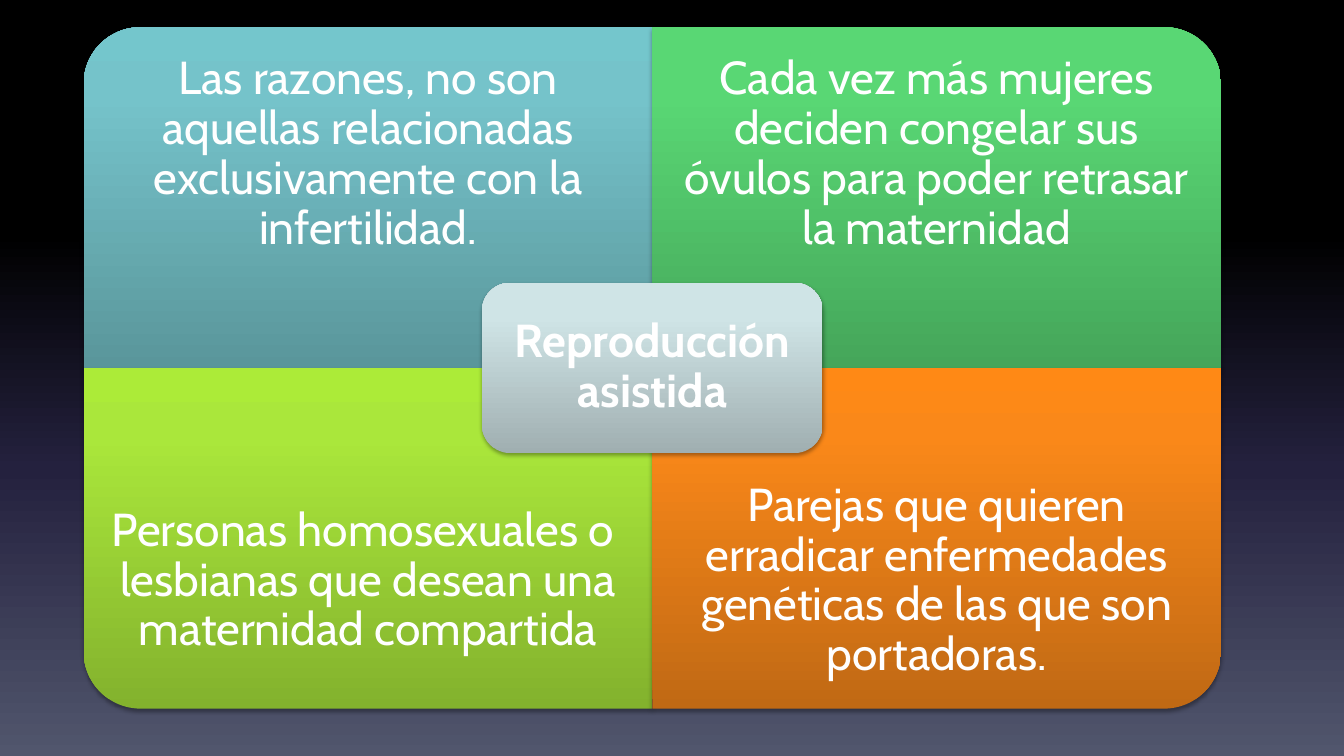
import pptx
import pptx.util
import pptx.oxml
import pptx.oxml.ns
import pptx.dml.color
import pptx.enum.shapes
import pptx.enum.text
from pptx.util import Inches

# Content: text, colours, column, row, turn that puts the round corner outside
QUADRANTS = [
    ("Las razones, no son aquellas relacionadas exclusivamente con la infertilidad.",
     "teal", 0, 0, 270),
    ("Cada vez más mujeres deciden congelar sus óvulos para poder retrasar la maternidad",
     "green", 1, 0, 0),
    ("Personas homosexuales o  lesbianas que desean una maternidad compartida",
     "lime", 0, 1, 180),
    ("Parejas que quieren erradicar enfermedades genéticas de las que son portadoras.",
     "orange", 1, 1, 90),
]
CENTRE_TEXT = "Reproducción asistida"
COLOURS = {
    "teal": ("5A969B", "75C3CA", "74C6CC"),
    "green": ("45A65A", "59D774", "57DA73"),
    "lime": ("83B22D", "AAE73B", "ACEB38"),
    "orange": ("C06914", "FA8819", "FF8915"),
    "grey": ("A0AFB1", "CFE4E6", "D0E5E7"),
    "backdrop": ("000000", "000000", "24213E", "51566D"),
    "text": "FFFFFF",
    "shadow": "000000",
}
SHAPE_STOPS = (0, 80, 100)
BACKDROP_STOPS = (0, 31, 62, 100)

# Measures in inches
LEFT, TOP = 0.83, 0.27
WIDTH, HEIGHT = 5.64, 3.38
TEXT_HEIGHT = 2.53
CENTRE_WIDTH, CENTRE_HEIGHT = 3.38, 1.69
CENTRE_MARGIN = 0.08

SHAPES = pptx.enum.shapes.MSO_SHAPE
NAMESPACE = pptx.oxml.ns.nsdecls("a")


def paint_gradient(fill, owner, name, positions, angle):
    """Fill with the named colours; angle runs clockwise, fixed to the page."""
    fill.gradient()
    stops = "".join(
        f'<a:gs pos="{position * 1000}"><a:srgbClr val="{colour}"/></a:gs>'
        for position, colour in zip(positions, COLOURS[name]))
    gradient = pptx.oxml.parse_xml(
        f'<a:gradFill {NAMESPACE} rotWithShape="0"><a:gsLst>{stops}</a:gsLst>'
        f'<a:lin ang="{angle * 60000}" scaled="0"/></a:gradFill>')
    former = owner.find(".//" + pptx.oxml.ns.qn("a:gradFill"))
    former.getparent().replace(former, gradient)


def add_panel(page, kind, centre_x, centre_y, width, height, name, turn=0):
    """Add a shaded panel around a centre; a quarter turn swaps its sides."""
    if turn % 180:
        width, height = height, width
    panel = page.shapes.add_shape(
        kind, Inches(centre_x - width / 2), Inches(centre_y - height / 2),
        Inches(width), Inches(height))
    panel.rotation = turn
    panel.line.fill.background()
    properties = panel._element.spPr
    paint_gradient(panel.fill, properties, name, SHAPE_STOPS, 270)
    properties.append(pptx.oxml.parse_xml(
        f'<a:effectLst {NAMESPACE}><a:outerShdw blurRad="{pptx.util.Pt(3.1)}" '
        f'dist="{pptx.util.Pt(1.8)}" dir="5400000" rotWithShape="0">'
        f'<a:srgbClr val="{COLOURS["shadow"]}"><a:alpha val="35000"/></a:srgbClr>'
        '</a:outerShdw></a:effectLst>'))


def add_label(page, text, left, top, width, height, inset, bold=False):
    box = page.shapes.add_textbox(
        Inches(left), Inches(top), Inches(width), Inches(height))
    frame = box.text_frame
    frame.word_wrap = True
    frame.vertical_anchor = pptx.enum.text.MSO_ANCHOR.MIDDLE
    frame.margin_left = frame.margin_right = Inches(inset)
    frame.margin_top = frame.margin_bottom = Inches(inset)
    para = frame.paragraphs[0]
    para.text = text
    para.alignment = pptx.enum.text.PP_ALIGN.CENTER
    para.line_spacing = 0.9
    para.font.name = "Cabin"
    para.font.size = pptx.util.Pt(33)
    para.font.bold = bold
    para.font.color.rgb = pptx.dml.color.RGBColor.from_string(COLOURS["text"])


def main():
    deck = pptx.Presentation()
    deck.slide_width, deck.slide_height = Inches(13.33), Inches(7.5)
    page = deck.slides.add_slide(deck.slide_layouts[6])
    paint_gradient(page.background.fill, page.element, "backdrop", BACKDROP_STOPS, 90)

    # Four quadrants, with text held towards the outer edge
    for text, name, column, row, turn in QUADRANTS:
        left, top = LEFT + column * WIDTH, TOP + row * HEIGHT
        add_panel(page, SHAPES.ROUND_1_RECTANGLE, left + WIDTH / 2, top + HEIGHT / 2,
                  WIDTH, HEIGHT, name, turn)
        add_label(page, text, left, top + row * (HEIGHT - TEXT_HEIGHT),
                  WIDTH, TEXT_HEIGHT, 0.26)

    # Central topic
    middle_x, middle_y = LEFT + WIDTH, TOP + HEIGHT
    add_panel(page, SHAPES.ROUNDED_RECTANGLE, middle_x, middle_y,
              CENTRE_WIDTH, CENTRE_HEIGHT, "grey")
    label_width = CENTRE_WIDTH - 2 * CENTRE_MARGIN
    label_height = CENTRE_HEIGHT - 2 * CENTRE_MARGIN
    add_label(page, CENTRE_TEXT, middle_x - label_width / 2, middle_y - label_height / 2,
              label_width, label_height, 0.14, bold=True)

    deck.save("out.pptx")


if __name__ == "__main__":
    main()
